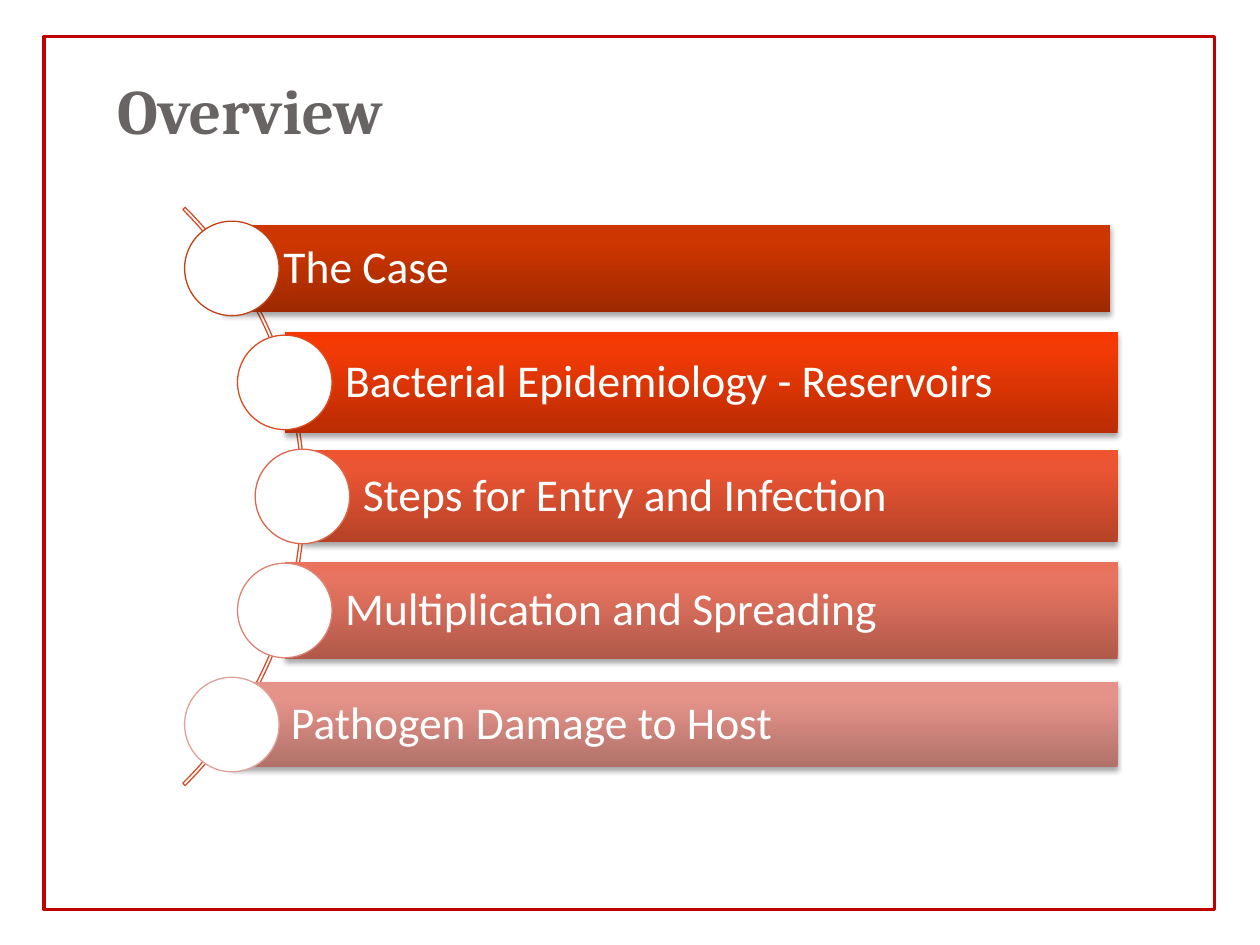
import copy
import lxml.etree
import pptx
import pptx.dml.color
import pptx.enum.shapes
import pptx.enum.text
import pptx.oxml
import pptx.oxml.ns
import pptx.util

Inches = pptx.util.Inches
Pt = pptx.util.Pt
SHAPES = pptx.enum.shapes.MSO_SHAPE
ALIGN = pptx.enum.text.PP_ALIGN
ANCHOR = pptx.enum.text.MSO_ANCHOR


def paint(color_format, value):
    color_format.rgb = pptx.dml.color.RGBColor.from_string(value)


def add_outline(kind, left, top, width, height, line_color, line_width):
    shape = slide.shapes.add_shape(kind, Inches(left), Inches(top), Inches(width), Inches(height))
    shape.shadow.inherit = False
    shape.fill.background()
    paint(shape.line.color, line_color)
    shape.line.width = Pt(line_width)
    return shape


presentation = pptx.Presentation()
presentation.slide_width = Inches(10)
presentation.slide_height = Inches(7.5)
slide = presentation.slides.add_slide(presentation.slide_layouts[5])

add_outline(SHAPES.RECTANGLE, 0.35, 0.29, 9.29, 6.93, "C00000", 2)

title = slide.shapes.title
title.left, title.top = Inches(0.83), Inches(0.52)
title.width, title.height = Inches(4.57), Inches(0.71)
title.text_frame.vertical_anchor = ANCHOR.TOP
paragraph = title.text_frame.paragraphs[0]
paragraph.alignment = ALIGN.LEFT
run = paragraph.add_run()
run.text = "Overview"
run.font.name = "Cambria"
run.font.size = Pt(36)
run.font.bold = True
paint(run.font.color, "696464")

arc_size = 6.49
middle = 3.94
arc = add_outline(SHAPES.BLOCK_ARC, -4.07, middle - arc_size / 2, arc_size, arc_size, "D44D28", 0.75)
arc.adjustments[0] = 189
arc.adjustments[1] = 27
arc.adjustments[2] = 0.004

topics = [
    ("The Case", 1.77, 8.81, 0.69, 1.84, ("9E2900", "CE3600", "CF3600"), "BF4115"),
    ("Bacterial Epidemiology - Reservoirs", 2.26, 8.87, 0.8, 2.26, ("BA2C04", "F13A05", "F73700"), "DD4B21"),
    ("Steps for Entry and Infection", 2.4, 8.87, 0.73, 2.4, ("B54227", "EB5533", "EF5430"), "DC664B"),
    ("Multiplication and Spreading", 2.26, 8.87, 0.77, 2.26, ("B1594A", "E67460", "EA725D"), "DD8373"),
    ("Pathogen Damage to Host", 1.83, 8.87, 0.68, 1.84, ("B07169", "E59389", "E89288"), "E1A098"),
]
pitch = 3.62 / 4
circle_size = 0.75
shadow_xml = (
    f'<a:outerShdw {pptx.oxml.ns.nsdecls("a")} blurRad="{Pt(3.1)}" dist="{Pt(1.8)}" '
    'dir="5400000" rotWithShape="0"><a:srgbClr val="000000">'
    '<a:alpha val="35000"/></a:srgbClr></a:outerShdw>'
)

for index, (topic, left, right, height, circle_center, gradient, circle_line) in enumerate(topics):
    center = middle + (index - 2) * pitch
    bar = slide.shapes.add_shape(
        SHAPES.RECTANGLE, Inches(left), Inches(center - height / 2), Inches(right - left), Inches(height)
    )
    bar.line.fill.background()
    bar.shadow.inherit = False
    effects = bar._element.spPr.find(pptx.oxml.ns.qn("a:effectLst"))
    effects.append(pptx.oxml.parse_xml(shadow_xml))

    bar.fill.gradient()
    bar.fill.gradient_angle = 90
    stop_list = bar._element.spPr.find(".//" + pptx.oxml.ns.qn("a:gsLst"))
    stop_list.append(copy.deepcopy(stop_list[-1]))
    for stop, position, color in zip(bar.fill.gradient_stops, (0, 0.8, 1), gradient):
        stop.position = position
        paint(stop.color, color)

    frame = bar.text_frame
    frame.word_wrap = True
    frame.vertical_anchor = ANCHOR.MIDDLE
    frame.margin_left = Inches(0.48)
    frame.margin_top = frame.margin_right = frame.margin_bottom = Inches(0.07)
    paragraph = frame.paragraphs[0]
    paragraph.alignment = ALIGN.LEFT
    paragraph.line_spacing = 0.9
    run = paragraph.add_run()
    run.text = topic
    run.font.name = "Calibri"
    run.font.size = Pt(26)
    paint(run.font.color, "FFFFFF")

    circle = add_outline(
        SHAPES.OVAL, circle_center - circle_size / 2, center - circle_size / 2,
        circle_size, circle_size, circle_line, 0.75,
    )
    circle.fill.solid()
    paint(circle.fill.fore_color, "FFFFFF")

presentation.save("out.pptx")
